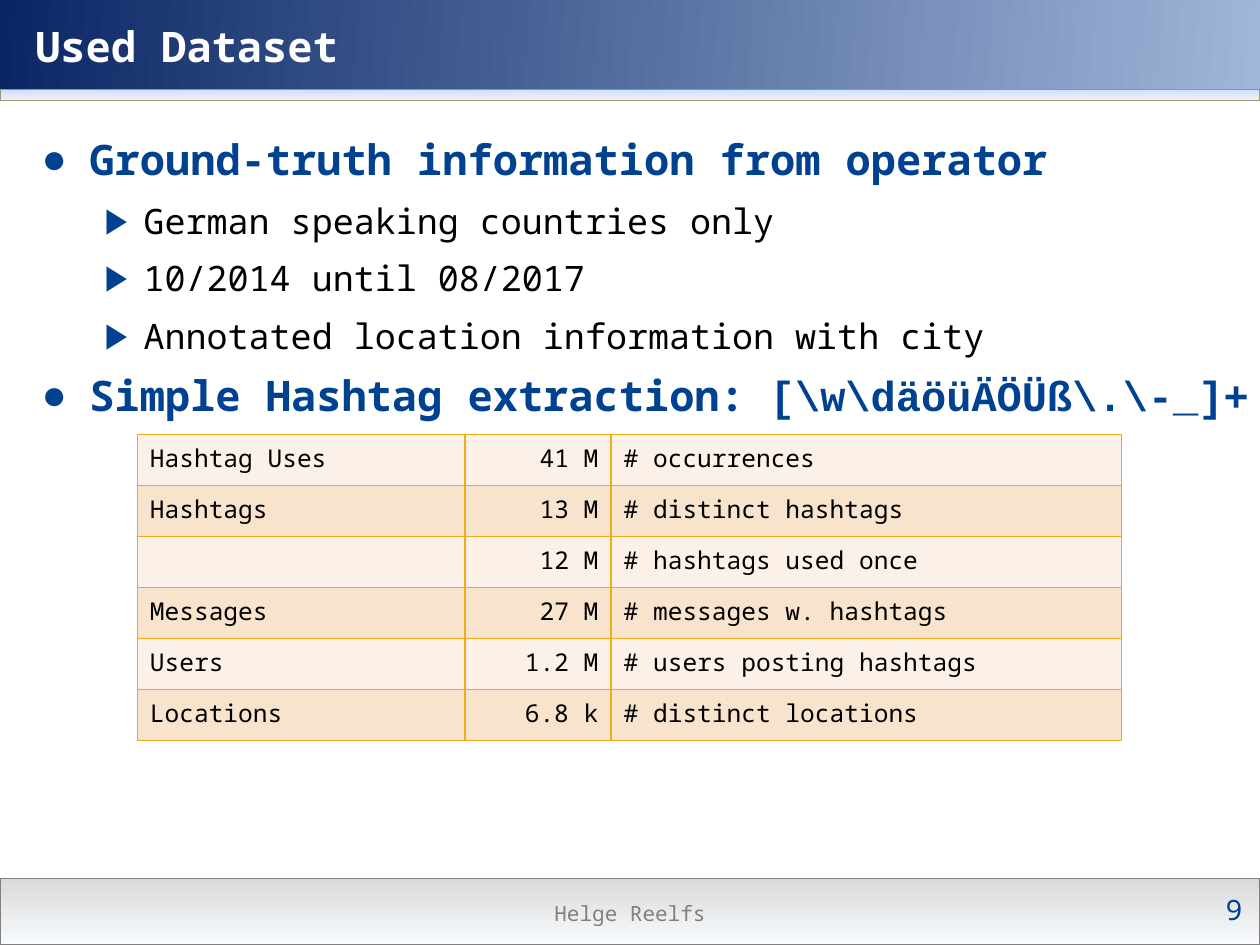
import pptx
import pptx.dml.color
import pptx.enum.shapes
import pptx.enum.text
import pptx.oxml
import pptx.oxml.ns
import pptx.util
from lxml import etree

Inches = pptx.util.Inches
Pt = pptx.util.Pt
RGBColor = pptx.dml.color.RGBColor
Align = pptx.enum.text.PP_ALIGN
Anchor = pptx.enum.text.MSO_ANCHOR

NAVY = RGBColor(0x0C, 0x26, 0x65)
SKY = RGBColor(0x9F, 0xB6, 0xD9)
PALE_BLUE = RGBColor(0xCE, 0xDF, 0xFF)
PALE_GREY = RGBColor(0xF2, 0xF2, 0xF2)
OLIVE = RGBColor(0x91, 0x99, 0x78)
SILVER = RGBColor(0xD9, 0xD9, 0xD9)
ICE = RGBColor(0xF8, 0xFB, 0xFF)
GREY = RGBColor(0x80, 0x80, 0x80)
BLUE = RGBColor(0x00, 0x42, 0x90)
WHITE = RGBColor(0xFF, 0xFF, 0xFF)
BLACK = RGBColor(0x00, 0x00, 0x00)
AMBER = RGBColor(0xEE, 0xAC, 0x19)
ROW_FILLS = (RGBColor(0xFC, 0xF1, 0xE8), RGBColor(0xF8, 0xE3, 0xCC))

SANS_MONO = "Noto Sans Mono"
CODE_FONT = "Courier New"

BULLETS = [
    (0, ["Ground-truth information from operator"]),
    (1, ["German speaking countries only"]),
    (1, ["10/2014 until 08/2017"]),
    (1, ["Annotated location information with city"]),
    (0, ["Simple Hashtag extraction: ", r"[\w\däöüÄÖÜß\.\-_]+"]),
]
LEVELS = [
    dict(indent=0.38, hang=0.38, spacing=1.1, mark="●", size=24, color=BLUE, bold=True),
    dict(indent=0.81, hang=0.31, spacing=1.2, mark="▶", size=20, color=BLACK, bold=False),
]
DATASET = [
    ("Hashtag Uses", "41 M", "# occurrences"),
    ("Hashtags", "13 M", "# distinct hashtags"),
    ("", "12 M", "# hashtags used once"),
    ("Messages", "27 M", "# messages w. hashtags"),
    ("Users", "1.2 M", "# users posting hashtags"),
    ("Locations", "6.8 k", "# distinct locations"),
]
COLUMN_WIDTHS = (2.6, 1.16, 4.05)
COLUMN_ALIGNS = (Align.LEFT, Align.RIGHT, Align.LEFT)


def inch_box(box):
    """Turn left, top, width and height in inches into lengths."""
    return [Inches(value) for value in box]


def style_font(font, size, color, bold=False, name=SANS_MONO):
    """Set the face, size, colour and weight of a font."""
    font.name = name
    font.size = Pt(size)
    font.color.rgb = color
    font.bold = bold


def add_band(page, box, start, end, angle, line=None):
    """Draw a rectangle with a two-colour gradient."""
    band = page.shapes.add_shape(pptx.enum.shapes.MSO_SHAPE.RECTANGLE, *inch_box(box))
    band.shadow.inherit = False
    band.fill.gradient()
    band.fill.gradient_angle = angle
    for stop, color in zip(band.fill.gradient_stops, (start, end)):
        stop.color.rgb = color
    if line is None:
        band.line.fill.background()
    else:
        band.line.color.rgb = line
        band.line.width = Pt(0.75)


def add_label(page, box, text, size, color, align):
    """Place one line of footer text."""
    label = page.shapes.add_textbox(*inch_box(box))
    frame = label.text_frame
    frame.word_wrap = True
    frame.vertical_anchor = Anchor.MIDDLE
    frame.margin_right = 0 if align == Align.RIGHT else Inches(0.1)
    frame.text = text
    para = frame.paragraphs[0]
    para.alignment = align
    style_font(para.runs[0].font, size, color)


def place_placeholder(page, placeholder, box):
    """Move a placeholder to its box and in front of the other shapes."""
    placeholder.left, placeholder.top, placeholder.width, placeholder.height = inch_box(box)
    page.shapes._spTree.append(placeholder._element)
    frame = placeholder.text_frame
    frame.word_wrap = True
    frame.auto_size = pptx.enum.text.MSO_AUTO_SIZE.NONE
    return frame


def fill_title(page, box, text):
    """Write the slide title."""
    frame = place_placeholder(page, page.shapes.title, box)
    frame.vertical_anchor = Anchor.MIDDLE
    frame.text = text
    para = frame.paragraphs[0]
    para.alignment = Align.LEFT
    style_font(para.runs[0].font, 24, WHITE, True)


def set_bullet(para, level):
    """Give a paragraph its indent and coloured bullet."""
    props = para._p.get_or_add_pPr()
    props.set("marL", str(Inches(level["indent"])))
    props.set("indent", str(-Inches(level["hang"])))
    mark_color = etree.SubElement(props, pptx.oxml.ns.qn("a:buClr"))
    etree.SubElement(mark_color, pptx.oxml.ns.qn("a:srgbClr"), val=str(BLUE))
    etree.SubElement(props, pptx.oxml.ns.qn("a:buChar"), char=level["mark"])


def fill_body(page, box, bullets):
    """Write the two-level bullet list, with room for the pattern on one line."""
    frame = place_placeholder(page, page.placeholders[1], box)
    frame.margin_right = 0
    for index, (depth, texts) in enumerate(bullets):
        para = frame.add_paragraph() if index else frame.paragraphs[0]
        level = LEVELS[depth]
        para.level = depth
        set_bullet(para, level)
        para.line_spacing = level["spacing"]
        if index == 0:
            para.space_before = Pt(0)
        for text, face in zip(texts, (SANS_MONO, CODE_FONT)):
            span = para.add_run()
            span.text = text
            style_font(span.font, level["size"], level["color"], level["bold"], face)


def set_borders(cell):
    """Draw amber lines on all sides of a cell."""
    props = cell._tc.get_or_add_tcPr()
    for position, side in enumerate(("a:lnL", "a:lnR", "a:lnT", "a:lnB")):
        line = etree.Element(pptx.oxml.ns.qn(side), w=str(Pt(1)))
        solid = etree.SubElement(line, pptx.oxml.ns.qn("a:solidFill"))
        etree.SubElement(solid, pptx.oxml.ns.qn("a:srgbClr"), val=str(AMBER))
        props.insert(position, line)


def add_dataset_table(page, box, rows):
    """Add the table of dataset figures with alternating row fills."""
    table = page.shapes.add_table(len(rows), len(COLUMN_WIDTHS), *inch_box(box)).table
    table.first_row = False
    table.horz_banding = False
    for column, width in zip(table.columns, COLUMN_WIDTHS):
        column.width = Inches(width)
    for row_index, texts in enumerate(rows):
        for column_index, text in enumerate(texts):
            cell = table.cell(row_index, column_index)
            cell.fill.solid()
            cell.fill.fore_color.rgb = ROW_FILLS[row_index % 2]
            set_borders(cell)
            cell.text_frame.text = text
            para = cell.text_frame.paragraphs[0]
            para.alignment = COLUMN_ALIGNS[column_index]
            style_font(para.font, 14, BLACK)
            for span in para.runs:
                style_font(span.font, 14, BLACK)


def add_header(page, box):
    """Draw the title band and the thin strip below it."""
    left, top, width, height = box
    strip = 0.09
    add_band(page, (left, top, width, height - strip), NAVY, SKY, 355)
    add_band(page, (left, top + height - strip, width, strip), PALE_BLUE, PALE_GREY, 270, OLIVE)


def add_footer(page, box):
    """Draw the footer band with the author and page number."""
    left, top, width, height = box
    add_band(page, box, SILVER, ICE, 270, GREY)
    add_label(page, (left + 2.26, top + 0.01, 5.48, height), "Helge Reelfs", 12, GREY, Align.CENTER)
    add_label(page, (left + width - 0.69, top + 0.06, 0.55, 0.37), "9", 16, BLUE, Align.RIGHT)


def main():
    """Build the slide and save the deck."""
    deck = pptx.Presentation()
    deck.slide_width, deck.slide_height = Inches(10), Inches(7.5)
    page = deck.slides.add_slide(deck.slide_layouts[1])
    add_header(page, (0, 0, 10, 0.8))
    add_footer(page, (0, 6.97, 10, 0.53))
    add_dataset_table(page, (1.09, 3.45, sum(COLUMN_WIDTHS), 2.43), DATASET)
    fill_title(page, (0.18, 0.11, 9.58, 0.5), "Used Dataset")
    fill_body(page, (0.23, 0.97, 9.74, 5.81), BULLETS)
    deck.save("out.pptx")


if __name__ == "__main__":
    main()
